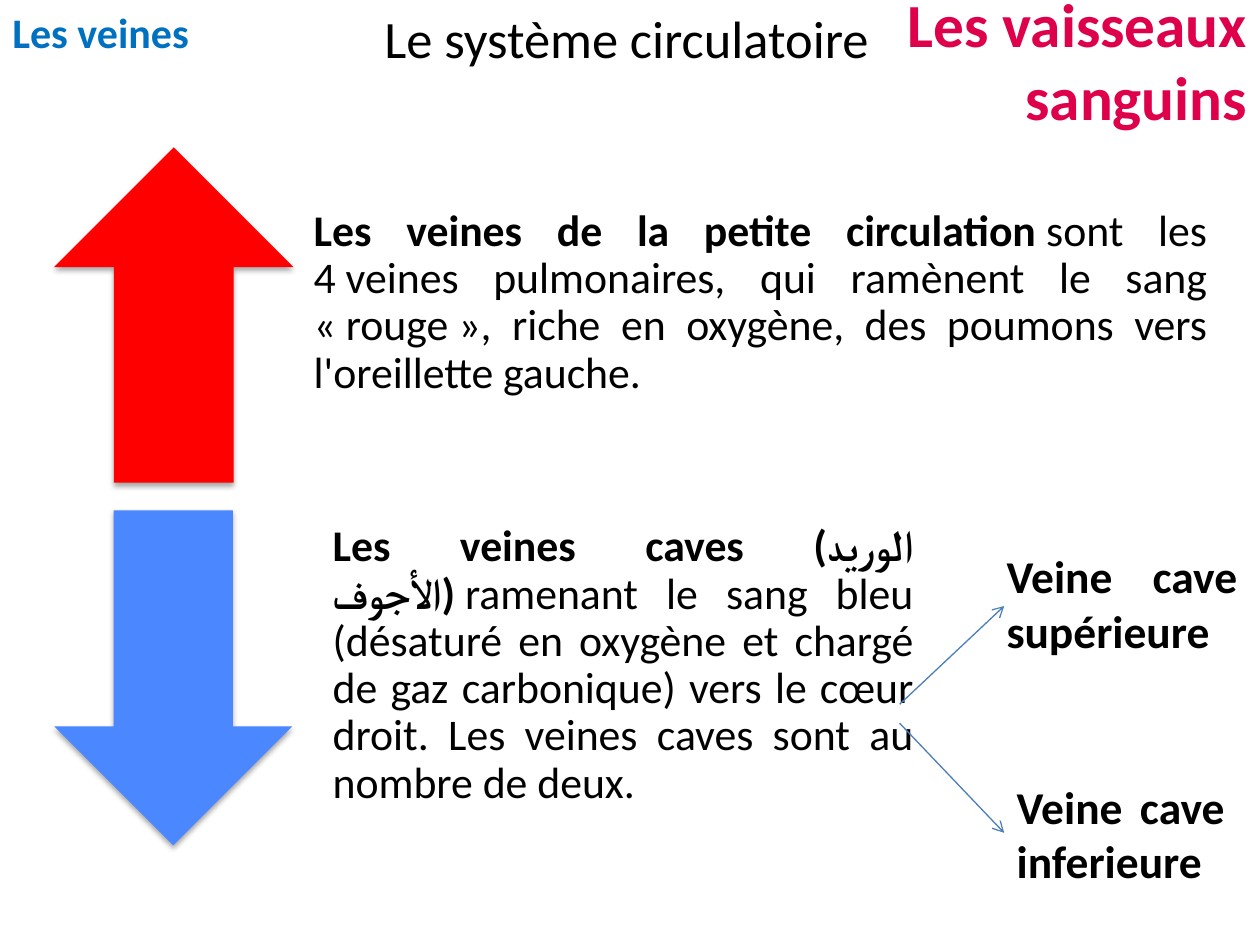
"""Build the slide on the veins of the circulatory system."""
from lxml import etree
from pptx import Presentation
from pptx.dml.color import RGBColor
from pptx.enum import shapes, text
from pptx.oxml import ns, parse_xml
from pptx.util import Inches, Pt

THEME = {
    "font": "Calibri",
    "black": "000000", "pink": "DE004A", "blue": "0070C0",
    "artery": "FF0000", "vein": "4B87FF", "line": "4B7EBC",
    "title": 30, "chapter": 35, "section": 24, "body": 25, "label": 26,
}
LEFT, RIGHT, JUSTIFY = text.PP_ALIGN.LEFT, text.PP_ALIGN.RIGHT, text.PP_ALIGN.JUSTIFY
NBSP = chr(160)
SHADOW = (
    f'<a:effectLst {ns.nsdecls("a")}><a:outerShdw blurRad="39370" dist="22860" '
    'dir="5400000" rotWithShape="0"><a:srgbClr val="000000"><a:alpha val="35000"/>'
    "</a:srgbClr></a:outerShdw></a:effectLst>"
)


def place(box, bounds):
    box.left, box.top, box.width, box.height = map(Inches, bounds)


def write(box, parts, size, color="black", align=LEFT, wrap=True):
    frame = box.text_frame
    frame.auto_size = text.MSO_AUTO_SIZE.NONE
    frame.word_wrap = wrap
    frame.vertical_anchor = text.MSO_ANCHOR.TOP
    paragraph = frame.paragraphs[0]
    paragraph.alignment = align
    for wording, bold in parts:
        run = paragraph.add_run()
        run.text = wording
        run.font.name = THEME["font"]
        run.font.size = Pt(THEME[size])
        run.font.bold = bold
        run.font.color.rgb = RGBColor.from_string(THEME[color])
        etree.SubElement(run._r.get_or_add_rPr(), ns.qn("a:cs"), typeface=THEME["font"])
    return frame


deck = Presentation()
deck.slide_width, deck.slide_height = Inches(10), Inches(7.5)
slide = deck.slides.add_slide(deck.slide_layouts[5])

title = slide.shapes.title
place(title, (2.95, 0, 4.08, 0.61))
write(title, [("Le système circulatoire", False)], "title", wrap=False)

headings = [
    ("Les vaisseaux sanguins", (6.97, -0.16, 3.03, 1.28), "chapter", "pink", RIGHT),
    (f"Les{NBSP}veines", (0, 0, 2.5, 0.5), "section", "blue", LEFT),
    ("Veine cave supérieure", (7.89, 4.3, 2.03, 0.98), "label", "black", JUSTIFY),
    ("Veine cave inferieure", (7.97, 6.13, 1.85, 0.98), "label", "black", JUSTIFY),
]
for wording, bounds, size, color, align in headings:
    heading = slide.shapes.add_textbox(*map(Inches, bounds))
    write(heading, [(wording, True)], size, color, align)

circulations = [
    (shapes.MSO_SHAPE.UP_ARROW, "artery", (0.43, 1.17, 1.9, 2.66), (2.3, 1.71, 7.47, 1.58),
     "Les veines de la petite circulation",
     f"{NBSP}sont les 4{NBSP}veines pulmonaires, qui ramènent le sang «{NBSP}rouge{NBSP}», "
     "riche en oxygène, des poumons vers l'oreillette gauche."),
    (shapes.MSO_SHAPE.DOWN_ARROW, "vein", (0.43, 4.05, 1.89, 2.66), (2.45, 4.05, 4.99, 2.66),
     "Les veines caves (الوريد الأجوف)",
     f"{NBSP}ramenant le sang bleu (désaturé en oxygène et chargé de gaz carbonique) "
     "vers le cœur droit. Les veines caves sont au nombre de deux."),
]
for direction, color, arrow_bounds, text_bounds, term, explanation in circulations:
    arrow = slide.shapes.add_shape(direction, *map(Inches, arrow_bounds))
    arrow.fill.solid()
    arrow.fill.fore_color.rgb = RGBColor.from_string(THEME[color])
    arrow.line.fill.background()
    arrow._element.spPr.append(parse_xml(SHADOW))

    description = slide.shapes.add_textbox(*map(Inches, text_bounds))
    frame = write(description, [(term, True), (explanation, False)], "body", align=JUSTIFY)
    frame.vertical_anchor = text.MSO_ANCHOR.MIDDLE
    frame.margin_left = frame.margin_right = frame.margin_bottom = Inches(0.19)
    frame.margin_top = 0
    frame.paragraphs[0].line_spacing = 0.9

for start_y, end_y in [(5.59, 4.81), (5.74, 6.61)]:
    branch = slide.shapes.add_connector(
        shapes.MSO_CONNECTOR.STRAIGHT, Inches(7.14), Inches(start_y), Inches(7.97), Inches(end_y))
    branch.line.color.rgb = RGBColor.from_string(THEME["line"])
    branch.line.width = Pt(0.75)
    etree.SubElement(branch.line._get_or_add_ln(), ns.qn("a:tailEnd"), type="arrow")
    etree.SubElement(branch._element.spPr, ns.qn("a:effectLst"))

deck.save("out.pptx")
